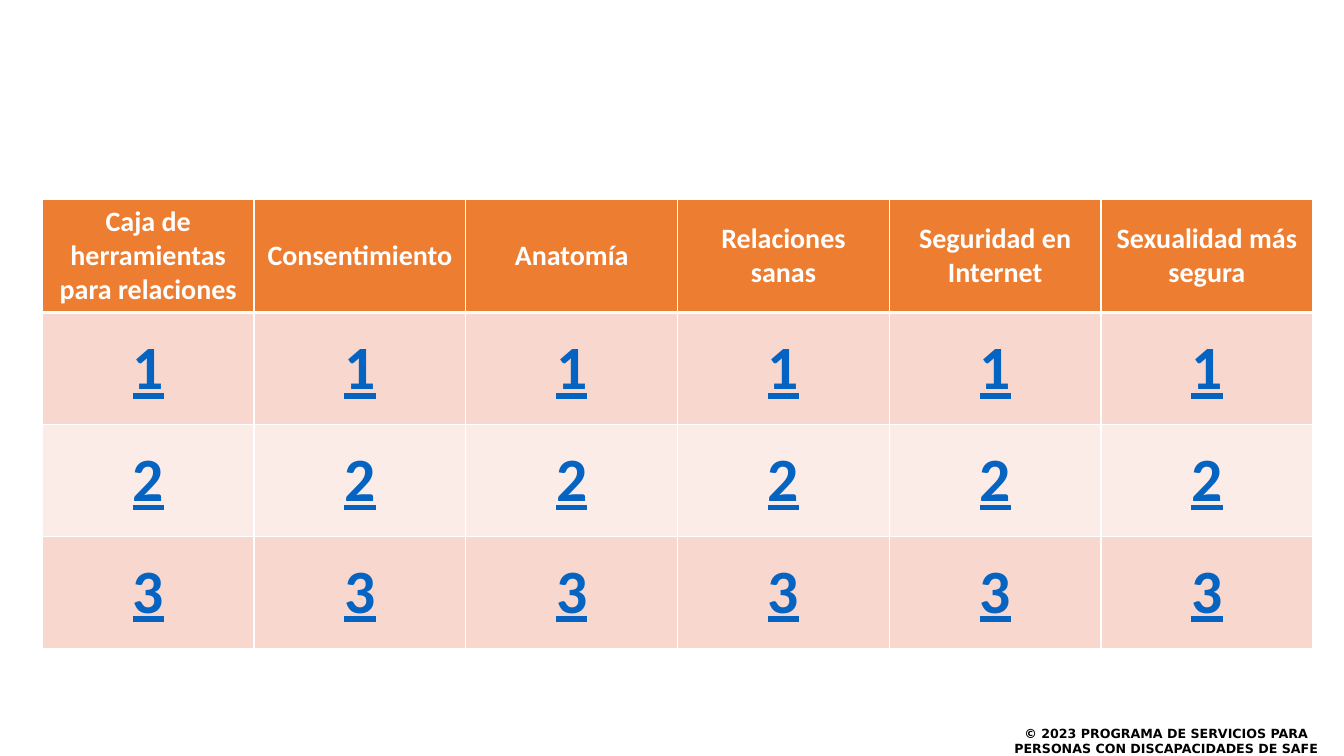
from lxml import etree
from pptx import Presentation
from pptx.dml.color import RGBColor
from pptx.enum.shapes import MSO_SHAPE
from pptx.enum.text import MSO_ANCHOR, PP_ALIGN
from pptx.oxml.ns import qn
from pptx.util import Inches, Pt

CENTER, MIDDLE = PP_ALIGN.CENTER, MSO_ANCHOR.MIDDLE
RECTANGLE = MSO_SHAPE.RECTANGLE

# Content
TOPICS = [
    "Caja de herramientas para relaciones",
    "Consentimiento",
    "Anatomía",
    "Relaciones sanas",
    "Seguridad en Internet",
    "Sexualidad más segura",
]
LEVELS = ["1", "2", "3"]
COPYRIGHT = "© 2023 PROGRAMA DE SERVICIOS PARA PERSONAS CON DISCAPACIDADES DE SAFE"

COLORS = {
    "white": "FFFFFF",
    "black": "000000",
    "header": "ED7D31",
    "odd": "F8D7CE",
    "even": "FCECE8",
    "number": "0563C1",
}

# Grid, in inches
SLIDE_W, SLIDE_H = 13.33, 7.5
BOARD_LEFT, BOARD_TOP = 0.42, 1.98
COLUMN_W, ROW_H = 2.1, 1.11
FOOTER_W, FOOTER_H, FOOTER_TOP = 3.53, 0.33, 7.19
THIN, THICK = 1, 3


def color(name):
    return RGBColor.from_string(COLORS[name])


def write(frame, text, size, font_name, ink, underline=False):
    paragraph = frame.paragraphs[0]
    paragraph.text = text
    paragraph.alignment = CENTER
    font = paragraph.font
    font.name, font.size, font.bold = font_name, Pt(size), True
    font.color.rgb = color(ink)
    if underline:
        font.underline = True


def add_borders(cell, top, bottom):
    properties = cell._tc.get_or_add_tcPr()
    for side, width in (("L", THIN), ("R", THIN), ("T", top), ("B", bottom)):
        line = etree.SubElement(properties, qn(f"a:ln{side}"), w=str(Pt(width)))
        fill = etree.SubElement(line, qn("a:solidFill"))
        etree.SubElement(fill, qn("a:srgbClr"), val=COLORS["white"])


presentation = Presentation()
presentation.slide_width = Inches(SLIDE_W)
presentation.slide_height = Inches(SLIDE_H)
slide = presentation.slides.add_slide(presentation.slide_layouts[6])

# Copyright footer, flush with the right edge
footer = slide.shapes.add_shape(
    RECTANGLE, Inches(SLIDE_W - FOOTER_W), Inches(FOOTER_TOP),
    Inches(FOOTER_W), Inches(FOOTER_H))
footer.shadow.inherit = False
footer.fill.solid()
footer.fill.fore_color.rgb = color("white")
footer.line.fill.background()
footer.text_frame.word_wrap = True
footer.text_frame.vertical_anchor = MIDDLE
write(footer.text_frame, COPYRIGHT, 9, "DejaVu Sans", "black")

# Game board: topics across, levels down
rows = [TOPICS] + [[level] * len(TOPICS) for level in LEVELS]
board = slide.shapes.add_table(
    len(rows), len(TOPICS), Inches(BOARD_LEFT), Inches(BOARD_TOP),
    Inches(COLUMN_W * len(TOPICS)), Inches(ROW_H * len(rows))).table
for column in board.columns:
    column.width = Inches(COLUMN_W)

for r, texts in enumerate(rows):
    board.rows[r].height = Inches(ROW_H)
    is_header = r == 0
    band = "header" if is_header else "odd" if r % 2 else "even"
    for c, text in enumerate(texts):
        cell = board.cell(r, c)
        cell.vertical_anchor = MIDDLE
        add_borders(cell, top=THICK if r == 1 else THIN,
                    bottom=THICK if is_header else THIN)
        cell.fill.solid()
        cell.fill.fore_color.rgb = color(band)
        if is_header:
            write(cell.text_frame, text, 20, "Calibri", "white")
        else:
            write(cell.text_frame, text, 44, "Calibri", "number", underline=True)

presentation.save("out.pptx")
